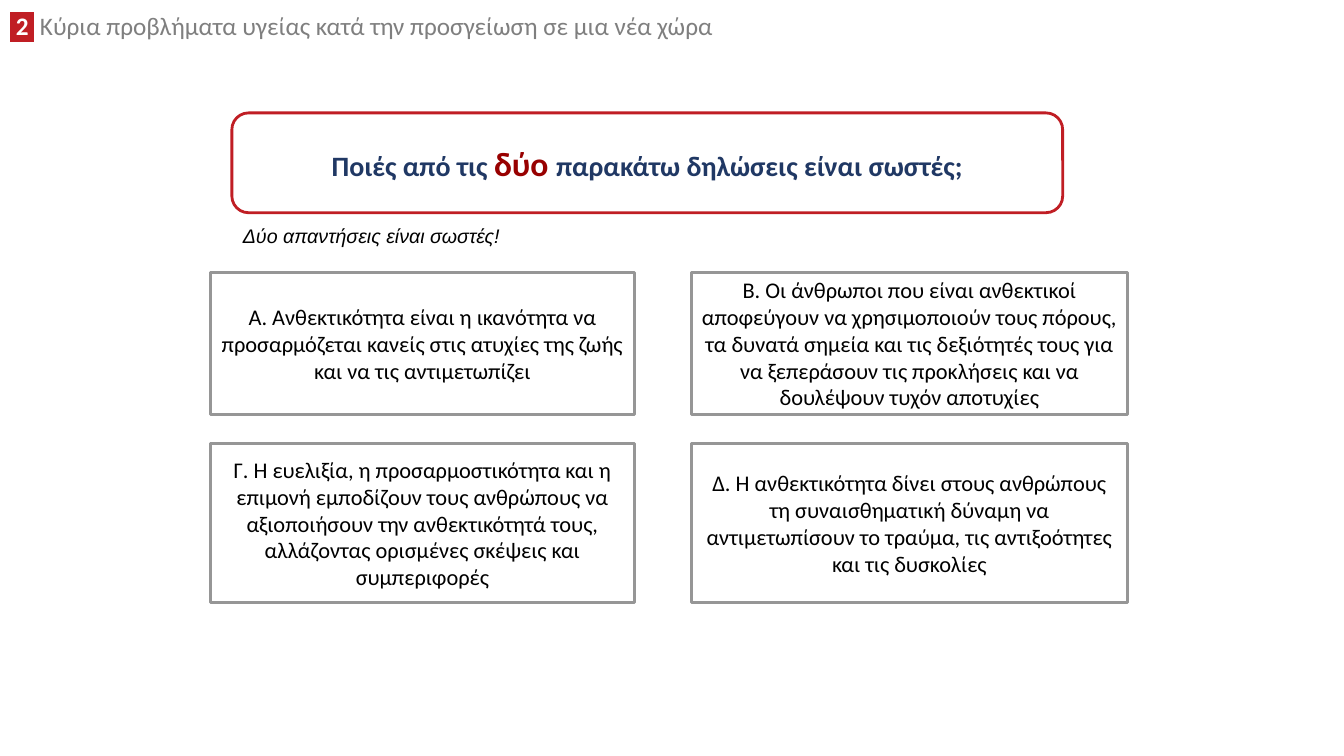
from lxml import etree
from pptx import Presentation
from pptx.dml.color import RGBColor
from pptx.enum.shapes import MSO_SHAPE
from pptx.enum.text import MSO_ANCHOR, MSO_AUTO_SIZE, PP_ALIGN
from pptx.oxml.ns import qn
from pptx.util import Inches, Pt

RECT = MSO_SHAPE.RECTANGLE
ROUND = MSO_SHAPE.ROUNDED_RECTANGLE
TOP, MIDDLE = MSO_ANCHOR.TOP, MSO_ANCHOR.MIDDLE
LEFT, CENTER = PP_ALIGN.LEFT, PP_ALIGN.CENTER
GROW = MSO_AUTO_SIZE.SHAPE_TO_FIT_TEXT

WHITE = RGBColor(0xFF, 0xFF, 0xFF)
BLACK = RGBColor(0, 0, 0)
RED = RGBColor(0xC0, 0x1E, 0x24)
DARK_RED = RGBColor(0x98, 0, 0)
NAVY = RGBColor(0x20, 0x38, 0x64)
GRAY = RGBColor(0x7F, 0x7F, 0x7F)
SILVER = RGBColor(0x96, 0x96, 0x96)

COLUMNS = [(2.09, 4.2), (6.86, 4.32)]
ROWS = [(2.7, 1.41), (4.4, 1.58)]
ANSWERS = [
    ["A. Ανθεκτικότητα είναι η ικανότητα να προσαρμόζεται κανείς στις ατυχίες "
     "της ζωής και να τις αντιμετωπίζει",
     "B. Οι άνθρωποι που είναι ανθεκτικοί αποφεύγουν να χρησιμοποιούν τους πόρους, "
     "τα δυνατά σημεία και τις δεξιότητές τους για να ξεπεράσουν τις προκλήσεις "
     "και να δουλέψουν τυχόν αποτυχίες"],
    ["Γ. Η ευελιξία, η προσαρμοστικότητα και η επιμονή εμποδίζουν τους ανθρώπους "
     "να αξιοποιήσουν την ανθεκτικότητά τους, αλλάζοντας ορισμένες σκέψεις και "
     "συμπεριφορές",
     "Δ. Η ανθεκτικότητα δίνει στους ανθρώπους τη συναισθηματική δύναμη να "
     "αντιμετωπίσουν το τραύμα, τις αντιξοότητες και τις δυσκολίες"],
]


class Quiz:
    def __init__(self, slide, font="Calibri"):
        self.slide = slide
        self.font = font

    def add_text(self, line, text, size, color, bold=False):
        run = line.add_run()
        run.text = text
        run.font.size = Pt(size)
        run.font.bold = bold
        run.font.name = self.font
        run.font.color.rgb = color
        return run

    def mark(self, run, color):
        fill = run.font._element.find(qn("a:solidFill"))
        light = etree.Element(qn("a:highlight"))
        etree.SubElement(light, qn("a:srgbClr"), val=str(color))
        fill.addnext(light)

    def title(self, number, text):
        shape = self.slide.shapes.title
        shape.left, shape.top = Inches(0), Inches(0.11)
        shape.width, shape.height = Inches(8.31), Inches(0.35)
        frame = shape.text_frame
        frame.auto_size = GROW
        frame.vertical_anchor = TOP
        line = frame.paragraphs[0]
        line.alignment = LEFT
        line.line_spacing = 0.8
        self.mark(self.add_text(line, f" {number} ", 18, WHITE, True), RED)
        self.add_text(line, f" {text}", 18, GRAY)

    def box(self, kind, left, top, width, height, edge, parts):
        shape = self.slide.shapes.add_shape(
            kind, Inches(left), Inches(top), Inches(width), Inches(height))
        shape.shadow.inherit = False
        shape.fill.solid()
        shape.fill.fore_color.rgb = WHITE
        shape.line.color.rgb = edge
        shape.line.width = Pt(2)
        frame = shape.text_frame
        frame.word_wrap = True
        frame.vertical_anchor = MIDDLE
        line = frame.paragraphs[0]
        line.alignment = CENTER
        for part in parts:
            self.add_text(line, *part)

    def hint(self, text):
        shape = self.slide.shapes.add_textbox(
            Inches(2.31), Inches(2.17), Inches(2.78), Inches(0.34))
        frame = shape.text_frame
        frame.word_wrap = False
        frame.auto_size = GROW
        run = self.add_text(frame.paragraphs[0], text, 14, BLACK)
        run.font.name = "Arial"
        run.font.italic = True


def main():
    deck = Presentation()
    deck.slide_width, deck.slide_height = Inches(13.33), Inches(7.5)
    quiz = Quiz(deck.slides.add_slide(deck.slide_layouts[5]))
    quiz.title(2, "Κύρια προβλήματα υγείας κατά την προσγείωση σε μια νέα χώρα")
    quiz.box(ROUND, 2.3, 1.12, 8.24, 0.99, RED, [
        ("Ποιές από τις ", 20, NAVY, True),
        ("δύο ", 24, DARK_RED, True),
        ("παρακάτω δηλώσεις είναι σωστές;", 20, NAVY, True),
    ])
    for (top, height), texts in zip(ROWS, ANSWERS):
        for (left, width), text in zip(COLUMNS, texts):
            quiz.box(RECT, left, top, width, height, SILVER, [(text, 16, BLACK)])
    quiz.hint("Δύο απαντήσεις είναι σωστές!")
    deck.save("out.pptx")


if __name__ == "__main__":
    main()
